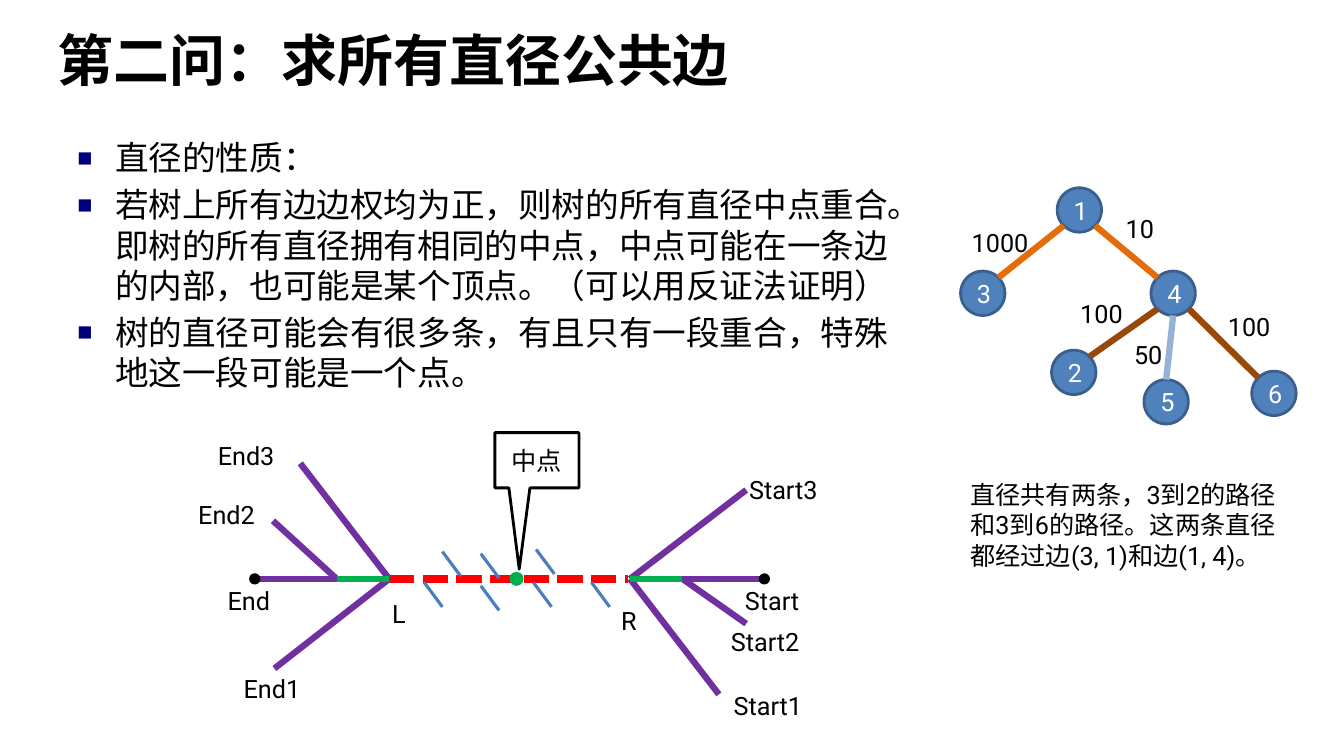
from dataclasses import dataclass

from lxml import etree
from pptx import Presentation
from pptx.dml.color import RGBColor
from pptx.enum import dml, lang, shapes, text
from pptx.oxml import ns
from pptx.util import Pt


@dataclass(frozen=True)
class Theme:
    black: str = "000000"
    white: str = "FFFFFF"
    bullet: str = "00007D"
    node: str = "4F81BD"
    node_rim: str = "3A5F8C"
    orange: str = "E46C0A"
    brown: str = "984807"
    pale_blue: str = "95B3D7"
    red: str = "FF0000"
    purple: str = "7030A0"
    green: str = "00B050"
    hatch: str = "4B7EBC"
    title_font: str = "Arial"
    body_font: str = "Noto Sans CJK SC"
    label_font: str = "Roboto"
    title_size: float = 40
    body_size: float = 24
    label_size: float = 18


THEME = Theme()
NODE_SIZE = 31.7
RIM = NODE_SIZE / 2
DIAGONAL = RIM * 0.71
AXIS = 413.5
LEFT_FORK, LEFT_HUB = 240.5, 278
RIGHT_HUB, RIGHT_FORK = 450, 487.5

BULLETS = [
    "直径的性质：",
    "若树上所有边边权均为正，则树的所有直径中点重合。即树的所有直径拥有相同的中点，"
    "中点可能在一条边的内部，也可能是某个顶点。（可以用反证法证明）",
    "树的直径可能会有很多条，有且只有一段重合，特殊地这一段可能是一个点。",
]
NODES = {
    "3": (702, 209.5), "1": (771, 150), "4": (838, 209.5),
    "6": (910, 281), "2": (767, 266), "5": (833, 287),
}
EDGES = [
    ("3", "1", THEME.orange), ("1", "4", THEME.orange), ("4", "6", THEME.brown),
    ("2", "4", THEME.brown), ("4", "5", THEME.pale_blue),
]
LABELS = [
    ("1000", 687, 158.5, 63), ("10", 797, 148.5, 37), ("100", 764.5, 209.5, 57),
    ("50", 803, 239, 37), ("100", 870, 219, 57),
    ("Start", 525, 414.5, 54), ("End", 155.5, 414.5, 54),
    ("L", 273, 423.5, 27), ("R", 436.5, 428.5, 27),
    ("End2", 134.5, 353, 71), ("End3", 148.5, 311, 71), ("End1", 167, 477.5, 71),
    ("Start1", 517, 489.5, 73), ("Start2", 515, 444, 73), ("Start3", 528, 335, 73),
]
BRANCHES = [
    (LEFT_HUB, 214.5, 331), (LEFT_HUB, 196, 477.5), (LEFT_FORK, 183.5, AXIS),
    (LEFT_FORK, 195, 372), (RIGHT_HUB, 533, 350), (RIGHT_HUB, 513.5, 496),
    (RIGHT_FORK, 543, AXIS), (RIGHT_FORK, 533, 445.5),
]
HATCHES = [
    (316, 394), (343.5, 395.5), (383, 392.5),
    (303, 416), (343.5, 418.5), (381, 416), (422.5, 416),
]


def place(shape, left, top, width, height):
    shape.left, shape.top = Pt(left), Pt(top)
    shape.width, shape.height = Pt(width), Pt(height)


def add_run(paragraph, words, font, size, color, bold=False):
    run = paragraph.add_run()
    run.text = words
    run.font.name = font
    run.font.size = Pt(size)
    run.font.bold = bold
    run.font.color.rgb = RGBColor.from_string(color)
    run.font.language_id = lang.MSO_LANGUAGE_ID.SIMPLIFIED_CHINESE


def add_square_bullet(paragraph):
    properties = paragraph._p.get_or_add_pPr()
    properties.set("marL", str(Pt(27)))
    properties.set("indent", str(Pt(-27)))
    color = etree.SubElement(properties, ns.qn("a:buClr"))
    etree.SubElement(color, ns.qn("a:srgbClr"), val=THEME.bullet)
    etree.SubElement(properties, ns.qn("a:buSzPct"), val="75000")
    etree.SubElement(properties, ns.qn("a:buChar"), char="■")


def fill_title(slide):
    title = slide.shapes.title
    place(title, 34, 8, 893, 68)
    title.text_frame.vertical_anchor = text.MSO_ANCHOR.MIDDLE
    title.text_frame.auto_size = text.MSO_AUTO_SIZE.NONE
    paragraph = title.text_frame.paragraphs[0]
    paragraph.alignment = text.PP_ALIGN.LEFT
    add_run(paragraph, "第二问：求所有直径公共边", THEME.title_font,
            THEME.title_size, THEME.black, bold=True)


def fill_body(slide):
    body = slide.placeholders[1]
    place(body, 48, 94.5, 604, 215)
    frame = body.text_frame
    frame.auto_size = text.MSO_AUTO_SIZE.NONE
    for index, words in enumerate(BULLETS):
        paragraph = frame.add_paragraph() if index else frame.paragraphs[0]
        paragraph.space_before = Pt(4.8 if index else 0)
        add_square_bullet(paragraph)
        add_run(paragraph, words, THEME.body_font, THEME.body_size, THEME.black)


def add_label(slide, words, left, top, width, height=29):
    box = slide.shapes.add_textbox(Pt(left), Pt(top), Pt(width), Pt(height))
    box.text_frame.word_wrap = True
    box.text_frame.auto_size = text.MSO_AUTO_SIZE.SHAPE_TO_FIT_TEXT
    add_run(box.text_frame.paragraphs[0], words, THEME.label_font,
            THEME.label_size, THEME.black)


def add_line(slide, start, end, color, width=4.5, dash=None):
    line = slide.shapes.add_connector(
        shapes.MSO_CONNECTOR.STRAIGHT, *(Pt(value) for value in (*start, *end)))
    line.line.color.rgb = RGBColor.from_string(color)
    line.line.width = Pt(width)
    if dash is not None:
        line.line.dash_style = dash
    etree.SubElement(line._element.spPr, ns.qn("a:effectLst"))


def add_outlined(slide, kind, left, top, width, height, outline, fill=None):
    shape = slide.shapes.add_shape(kind, Pt(left), Pt(top), Pt(width), Pt(height))
    shape.shadow.inherit = False
    shape.line.color.rgb = RGBColor.from_string(outline)
    shape.line.width = Pt(2)
    if fill:
        shape.fill.solid()
        shape.fill.fore_color.rgb = RGBColor.from_string(fill)
    else:
        shape.fill.background()
    return shape


def add_circle(slide, center, size, outline, fill):
    x, y = center
    return add_outlined(slide, shapes.MSO_SHAPE.OVAL, x - size / 2, y - size / 2,
                        size, size, outline, fill)


def write_centered(shape, words, color):
    shape.text_frame.vertical_anchor = text.MSO_ANCHOR.MIDDLE
    paragraph = shape.text_frame.paragraphs[0]
    paragraph.alignment = text.PP_ALIGN.CENTER
    add_run(paragraph, words, THEME.label_font, THEME.label_size, color)


def add_edge(slide, first, second, color):
    (x1, y1), (x2, y2) = NODES[first], NODES[second]
    steep = abs(x2 - x1) < RIM
    dx = 0 if steep else DIAGONAL if x2 > x1 else -DIAGONAL
    reach = RIM if steep else DIAGONAL
    dy = reach if y2 > y1 else -reach
    add_line(slide, (x1 + dx, y1 + dy), (x2 - dx, y2 - dy), color)


def draw_tree(slide):
    for number, center in NODES.items():
        node = add_circle(slide, center, NODE_SIZE, THEME.node_rim, THEME.node)
        write_centered(node, number, THEME.white)
    for edge in EDGES:
        add_edge(slide, *edge)


def draw_diameters(slide):
    add_line(slide, (LEFT_HUB, AXIS), (448.5, AXIS), THEME.red, 6,
             dml.MSO_LINE.SQUARE_DOT)
    for start, x, y in BRANCHES:
        add_line(slide, (start, AXIS), (x, y), THEME.purple)
    for hub, fork in ((LEFT_HUB, LEFT_FORK), (RIGHT_HUB, RIGHT_FORK)):
        add_line(slide, (hub, AXIS), (fork, AXIS), THEME.green)
    for x, y in HATCHES:
        add_line(slide, (x, y), (x + 13, y + 17.5), THEME.hatch, 2.25)
    for x in (182, 546):
        add_circle(slide, (x, AXIS), 6, THEME.black, THEME.black)
    add_circle(slide, (369, AXIS), 8, THEME.green, THEME.green)
    callout = add_outlined(slide, shapes.MSO_SHAPE.RECTANGULAR_CALLOUT,
                           353.5, 309, 60, 39.5, THEME.black)
    callout.adjustments[0] = -0.21
    callout.adjustments[1] = 1.97
    write_centered(callout, "中点", THEME.black)


def main():
    presentation = Presentation()
    presentation.slide_width, presentation.slide_height = Pt(960), Pt(540)
    slide = presentation.slides.add_slide(presentation.slide_layouts[1])
    fill_title(slide)
    fill_body(slide)
    draw_tree(slide)
    draw_diameters(slide)
    for label in LABELS:
        add_label(slide, *label)
    add_label(slide, "直径共有两条，3到2的路径和3到6的路径。这两条直径都经过边(3, 1)和边(1, 4)。",
              686, 339, 249, 73)
    presentation.save("out.pptx")


if __name__ == "__main__":
    main()
